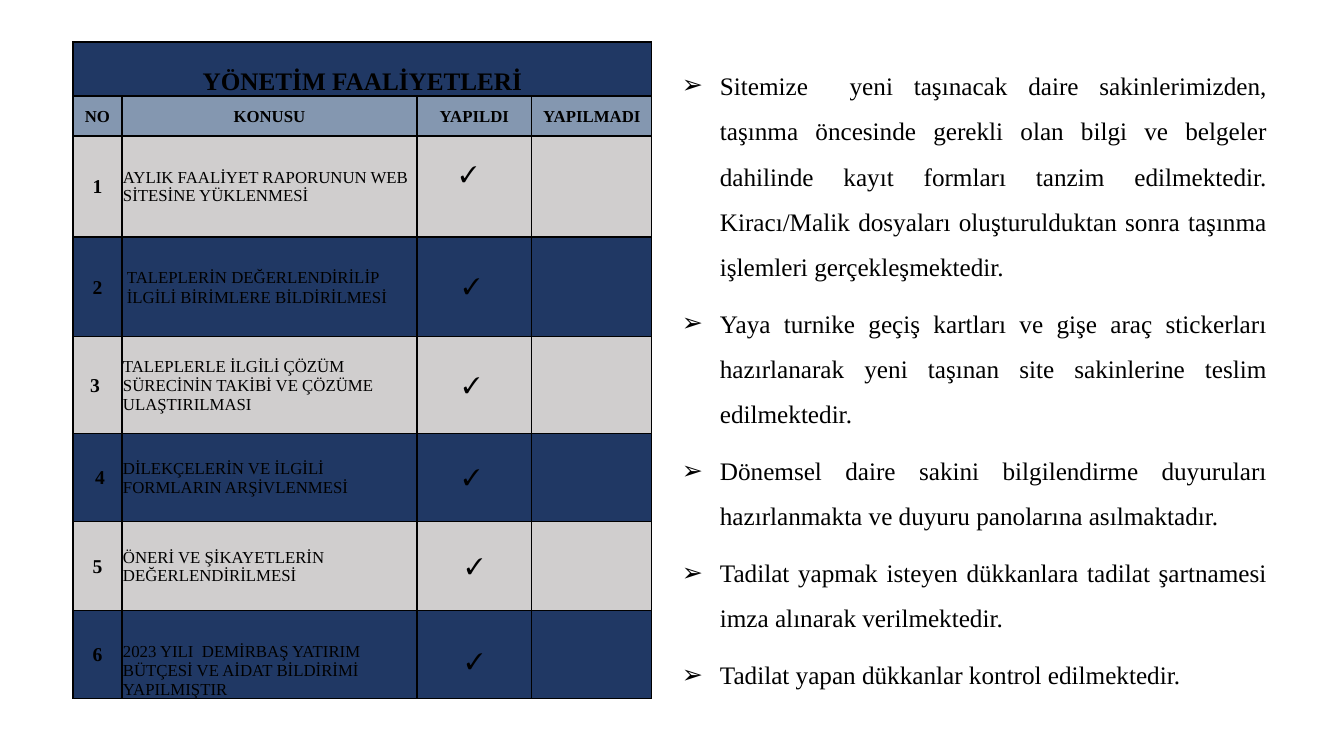
from dataclasses import dataclass

from lxml.etree import SubElement
from pptx import Presentation
from pptx.dml.color import RGBColor
from pptx.enum.text import MSO_ANCHOR, MSO_AUTO_SIZE, PP_ALIGN
from pptx.oxml.ns import qn
from pptx.slide import Slide
from pptx.table import _Cell
from pptx.text.text import _Paragraph
from pptx.util import Emu, Pt

EMU_PER_PX = 914400 / 100.8
FONT = "Times New Roman"
BLACK = RGBColor(0x00, 0x00, 0x00)
NAVY = RGBColor(0x20, 0x38, 0x64)
STEEL = RGBColor(0x84, 0x97, 0xB0)
GREY = RGBColor(0xD0, 0xCE, 0xCE)

TITLE = "YÖNETİM FAALİYETLERİ"
HEADERS = ["NO", "KONUSU", "YAPILDI", "YAPILMADI"]
COLUMN_WIDTHS = [49, 295, 115, 120]
TITLE_HEIGHT, HEADER_HEIGHT = 54, 40


@dataclass(frozen=True)
class Margins:
    """Cell insets in px."""
    left: int = 1
    top: int = 1
    right: int = 1
    bottom: int = 0


PLAIN = Margins()
WIDE = Margins(left=5, top=0, right=5)
CHECK = Margins(right=7)


@dataclass(frozen=True)
class Style:
    size: int
    bold: bool = True
    align: PP_ALIGN = PP_ALIGN.CENTER
    anchor: MSO_ANCHOR = MSO_ANCHOR.MIDDLE
    margins: Margins = PLAIN
    line_spacing: float = 1.0


@dataclass(frozen=True)
class Activity:
    topic: str
    height: int
    number_margins: Margins = PLAIN
    topic_margins: Margins = PLAIN
    check_margins: Margins = CHECK
    topic_anchor: MSO_ANCHOR = MSO_ANCHOR.MIDDLE
    line_spacing: float = 1.0


ACTIVITIES = [
    Activity("AYLIK FAALİYET RAPORUNUN WEB SİTESİNE YÜKLENMESİ", 101,
             check_margins=Margins(right=13, bottom=24)),
    Activity("TALEPLERİN DEĞERLENDİRİLİP İLGİLİ BİRİMLERE BİLDİRİLMESİ", 100,
             topic_margins=WIDE, line_spacing=1.07),
    Activity("TALEPLERLE İLGİLİ ÇÖZÜM SÜRECİNİN TAKİBİ VE ÇÖZÜME ULAŞTIRILMASI", 97,
             number_margins=Margins(right=6)),
    Activity("DİLEKÇELERİN VE İLGİLİ FORMLARIN ARŞİVLENMESİ", 88,
             number_margins=Margins(left=6)),
    Activity("ÖNERİ VE ŞİKAYETLERİN DEĞERLENDİRİLMESİ", 89, check_margins=PLAIN),
    Activity("2023 YILI  DEMİRBAŞ YATIRIM BÜTÇESİ VE AİDAT BİLDİRİMİ YAPILMIŞTIR", 88,
             check_margins=Margins(top=14), topic_anchor=MSO_ANCHOR.BOTTOM),
]

NOTICES = [
    "Sitemize  yeni taşınacak daire sakinlerimizden, taşınma öncesinde gerekli olan "
    "bilgi ve belgeler dahilinde kayıt formları tanzim edilmektedir. Kiracı/Malik "
    "dosyaları oluşturulduktan sonra taşınma işlemleri gerçekleşmektedir.",
    "Yaya turnike geçiş kartları ve gişe araç stickerları hazırlanarak yeni taşınan "
    "site sakinlerine teslim edilmektedir.",
    "Dönemsel daire sakini bilgilendirme duyuruları hazırlanmakta ve duyuru "
    "panolarına asılmaktadır.",
    "Tadilat yapmak isteyen dükkanlara tadilat şartnamesi imza alınarak verilmektedir.",
    "Tadilat yapan dükkanlar kontrol edilmektedir.",
]


def px(length: int) -> Emu:
    return Emu(round(length * EMU_PER_PX))


def format_runs(paragraph: _Paragraph, size: int, bold: bool) -> None:
    for span in paragraph.runs:
        span.font.name = FONT
        span.font.size = Pt(size)
        span.font.bold = bold
        span.font.color.rgb = BLACK


def paint_cell(cell: _Cell, color: RGBColor) -> None:
    """Give the cell black borders, then its fill, in schema order."""
    properties = cell._tc.get_or_add_tcPr()
    for side in ("lnL", "lnR", "lnT", "lnB"):
        line = SubElement(properties, qn(f"a:{side}"), w=str(Pt(1)))
        fill = SubElement(line, qn("a:solidFill"))
        SubElement(fill, qn("a:srgbClr"), val=str(BLACK))
    cell.fill.solid()
    cell.fill.fore_color.rgb = color


def write_cell(cell: _Cell, text: str, style: Style) -> None:
    cell.text_frame.text = text
    cell.vertical_anchor = style.anchor
    cell.margin_left = px(style.margins.left)
    cell.margin_top = px(style.margins.top)
    cell.margin_right = px(style.margins.right)
    cell.margin_bottom = px(style.margins.bottom)
    paragraph = cell.text_frame.paragraphs[0]
    paragraph.alignment = style.align
    paragraph.line_spacing = style.line_spacing
    format_runs(paragraph, style.size, style.bold)


def add_activity_table(page: Slide) -> None:
    heights = [TITLE_HEIGHT, HEADER_HEIGHT] + [item.height for item in ACTIVITIES]
    frame = page.shapes.add_table(len(heights), len(COLUMN_WIDTHS), px(73), px(42),
                                  px(sum(COLUMN_WIDTHS)), px(sum(heights)))
    table = frame.table
    table.first_row = False
    table.horz_banding = False
    for column, width in zip(table.columns, COLUMN_WIDTHS):
        column.width = px(width)
    row_colors = [NAVY, STEEL] + [(GREY, NAVY)[i % 2] for i in range(len(ACTIVITIES))]
    for row, height, color in zip(table.rows, heights, row_colors):
        row.height = px(height)
        for cell in row.cells:
            paint_cell(cell, color)

    table.cell(0, 0).merge(table.cell(0, len(COLUMN_WIDTHS) - 1))
    write_cell(table.cell(0, 0), TITLE, Style(18, anchor=MSO_ANCHOR.BOTTOM))
    for column, header in enumerate(HEADERS):
        write_cell(table.cell(1, column), header, Style(12))
    for number, item in enumerate(ACTIVITIES, start=1):
        row = number + 1
        write_cell(table.cell(row, 0), str(number), Style(14, margins=item.number_margins))
        write_cell(table.cell(row, 1), item.topic,
                   Style(12, False, PP_ALIGN.LEFT, item.topic_anchor,
                         item.topic_margins, item.line_spacing))
        write_cell(table.cell(row, 2), "✓", Style(16, margins=item.check_margins))


def add_bullet(paragraph: _Paragraph, indent: int) -> None:
    properties = paragraph._p.get_or_add_pPr()
    properties.set("marL", str(px(indent)))
    properties.set("indent", str(-px(indent)))
    SubElement(properties, qn("a:buFont"), typeface="Arial")
    SubElement(properties, qn("a:buChar"), char="➢")


def add_notices(page: Slide) -> None:
    box = page.shapes.add_textbox(px(672), px(50), px(605), px(660))
    frame = box.text_frame
    frame.word_wrap = True
    frame.auto_size = MSO_AUTO_SIZE.SHAPE_TO_FIT_TEXT
    frame.text = "\n".join(NOTICES)
    for paragraph in frame.paragraphs:
        add_bullet(paragraph, 38)
        paragraph.alignment = PP_ALIGN.JUSTIFY
        paragraph.line_spacing = 1.5
        paragraph.space_after = Pt(8)
        format_runs(paragraph, 18, False)


def main() -> None:
    deck = Presentation()
    deck.slide_width, deck.slide_height = px(1344), px(756)
    page = deck.slides.add_slide(deck.slide_layouts[6])
    add_activity_table(page)
    add_notices(page)
    deck.save("out.pptx")


if __name__ == "__main__":
    main()
